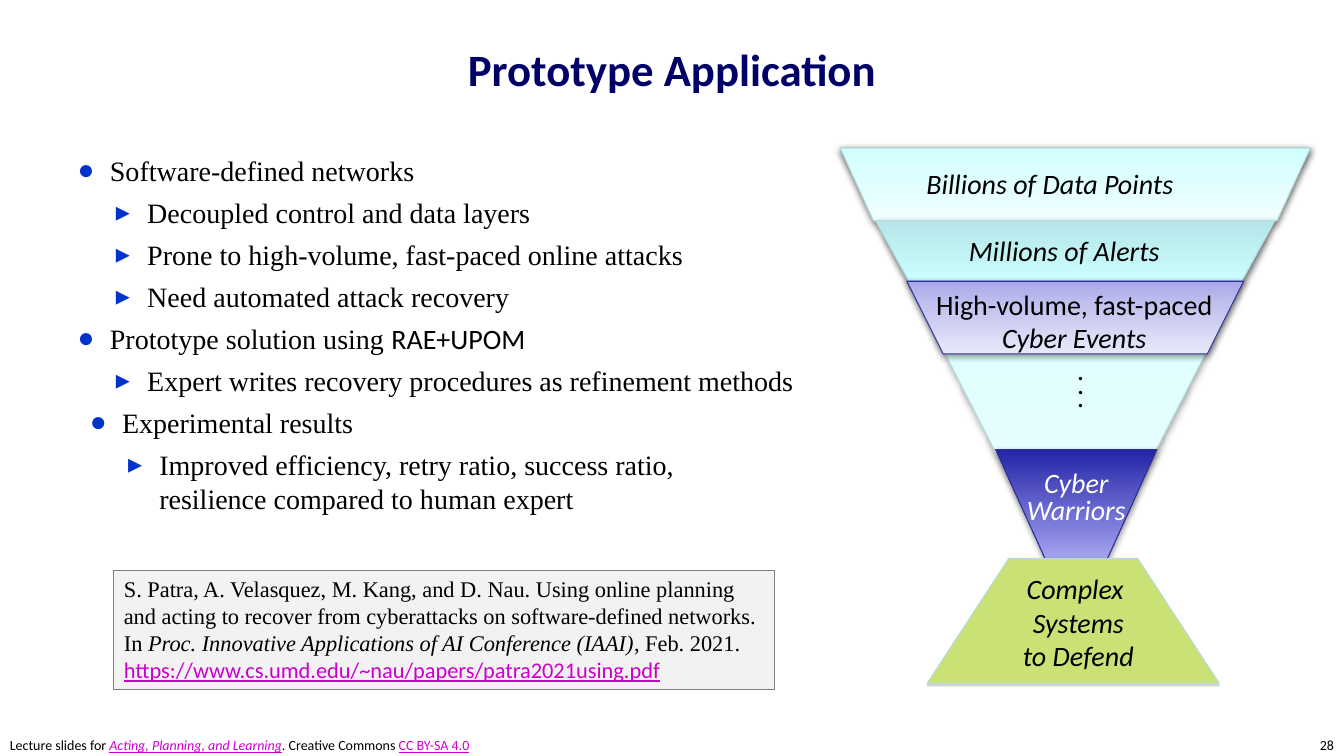
from dataclasses import dataclass

from lxml.etree import SubElement
from pptx import Presentation
from pptx.dml.color import RGBColor
from pptx.enum.shapes import MSO_SHAPE as Preset
from pptx.enum.text import MSO_ANCHOR as Anchor, MSO_AUTO_SIZE as AutoSize, PP_ALIGN as Align
from pptx.oxml.ns import qn
from pptx.util import Inches, Pt


@dataclass(frozen=True)
class Theme:
    sans: str = "Calibri"
    serif: str = "Times New Roman"
    black: str = "000000"
    white: str = "FFFFFF"
    navy: str = "000066"
    bullet: str = "0033CC"
    link: str = "CC00CC"
    panel: str = "F2F2F2"
    gray: str = "808080"
    lime: str = "CAE175"
    pale_line: str = "B6DCDF"
    dark_line: str = "2F2F98"
    ice: tuple = ((0, "CFFFFF"), (35, "DDFEFF"), (100, "F0FFFF"))
    aqua: tuple = ((0, "B5E5E9"), (100, "CBFFFF"))
    lilac: tuple = ((0, "A8A8EA"), (35, "C3C3EF"), (100, "E8E8FA"))
    indigo: tuple = ((0, "2424A8"), (100, "A3A3EF"))
    title_size: int = 32
    body_size: int = 20
    cite_size: int = 16
    foot_size: int = 10


THEME = Theme()


@dataclass(frozen=True)
class Box:
    left: float
    top: float
    width: float
    height: float

    def inner(self, left, top, width, height):
        return Box(self.left + left, self.top + top, width, height)

    def lengths(self):
        return [Inches(side) for side in (self.left, self.top, self.width, self.height)]


def style_font(font, name=None, size=None, color=None, bold=None, italic=None, underline=None):
    if name:
        font.name = name
    if size:
        font.size = Pt(size)
    if color:
        font.color.rgb = RGBColor.from_string(color)
    for key, value in (("bold", bold), ("italic", italic), ("underline", underline)):
        if value is not None:
            setattr(font, key, value)


def write(para, spans, **base):
    style_font(para.font, **base)
    for text, changes in spans:
        for index, line in enumerate(text.split("\n")):
            if index:
                para.add_line_break()
            span = para.add_run()
            span.text = line
            style_font(span.font, **changes)


def move(shape, box):
    shape.left, shape.top, shape.width, shape.height = box.lengths()


def add_text(page, box, lines, align=Align.LEFT, wrap=True, margin=0.05, spacing=None, **base):
    shape = page.shapes.add_textbox(*box.lengths())
    frame = shape.text_frame
    frame.word_wrap = wrap
    frame.margin_top = frame.margin_bottom = Inches(margin)
    for index, spans in enumerate(lines):
        para = frame.add_paragraph() if index else frame.paragraphs[0]
        para.alignment = align
        if spacing:
            para.line_spacing = spacing
        write(para, spans, **base)
    return shape


def paint(shape, fill, line, shadow=None, angle=270):
    if isinstance(fill, str):
        shape.fill.solid()
        shape.fill.fore_color.rgb = RGBColor.from_string(fill)
    else:
        shape.fill.gradient()
        shape.fill.gradient_angle = angle
        stops = shape._element.spPr.find(".//" + qn("a:gsLst"))
        stops[:] = []
        for place, color in fill:
            stop = SubElement(stops, qn("a:gs"), pos=str(place * 1000))
            SubElement(stop, qn("a:srgbClr"), val=color)
    shape.line.color.rgb = RGBColor.from_string(line)
    shape.line.width = Pt(0.75)
    shape.shadow.inherit = False
    if shadow:
        color, alpha, blur, distance = shadow
        effects = shape._element.spPr.find(qn("a:effectLst"))
        outer = SubElement(effects, qn("a:outerShdw"), blurRad=str(Pt(blur)),
                           dist=str(Pt(distance)), dir="5400000", rotWithShape="0")
        tint = SubElement(outer, qn("a:srgbClr"), val=color)
        SubElement(tint, qn("a:alpha"), val=str(alpha * 1000))


def add_title(page, box):
    title = page.shapes.title
    move(title, box)
    frame = title.text_frame
    frame.auto_size = AutoSize.NONE
    frame.vertical_anchor = Anchor.BOTTOM
    para = frame.paragraphs[0]
    para.alignment = Align.CENTER
    write(para, [("Prototype Application", {})], name=THEME.sans,
          size=THEME.title_size, color=THEME.navy, bold=True)


def add_bullets(page, box):
    items = [
        (0, 0.32, [("Software-defined networks", {})]),
        (1, 0.69, [("Decoupled control and data layers", {})]),
        (1, 0.69, [("Prone to high-volume, fast-paced online attacks", {})]),
        (1, 0.69, [("Need automated attack recovery", {})]),
        (0, 0.32, [("Prototype solution using ", {}), ("RAE+UPOM", {"name": THEME.sans})]),
        (1, 0.69, [("Expert writes recovery procedures as refinement methods", {})]),
        (0, 0.44, [("Experimental results", {})]),
        (1, 0.81, [("Improved efficiency, retry ratio, success ratio,\n"
                    "resilience compared to human expert", {})]),
    ]
    body = page.placeholders[1]
    move(body, box)
    frame = body.text_frame
    frame.auto_size = AutoSize.NONE
    for index, (level, indent, spans) in enumerate(items):
        para = frame.add_paragraph() if index else frame.paragraphs[0]
        para.level = level
        props = para._p.get_or_add_pPr()
        props.set("marL", str(Inches(indent)))
        props.set("indent", str(Inches((-0.32, -0.31)[level])))
        SubElement(SubElement(props, qn("a:buClr")), qn("a:srgbClr"), val=THEME.bullet)
        SubElement(props, qn("a:buChar"), char="●▸"[level])
        para.space_before = Pt(6 if index else 0)
        write(para, spans, name=THEME.serif, size=THEME.body_size, color=THEME.black)


def add_band(page, center, top, height, half_top, half_bottom, fill, line, shadow):
    bottom = top + height
    corners = [(center + half_top, top), (center + half_bottom, bottom),
               (center - half_bottom, bottom), (center - half_top, top)]
    points = [(Inches(x), Inches(y)) for x, y in corners]
    builder = page.shapes.build_freeform(*points[0])
    builder.add_line_segments(points[1:], close=True)
    paint(builder.convert_to_shape(), fill, line, shadow)


def add_funnel(page, box):
    soft, firm = (THEME.black, 38, 5, 1.6), (THEME.black, 35, 5, 1.8)
    cone = page.shapes.add_shape(Preset.ISOSCELES_TRIANGLE, *box.inner(0, 0, 4.67, 4.56).lengths())
    cone.rotation = 180
    paint(cone, THEME.ice, THEME.pale_line, soft, angle=90)

    bands = [
        (0, 0, 0.72, 2.33, 2, THEME.ice, THEME.pale_line, soft),
        (0, 0.72, 0.6, 1.98, 1.65, THEME.aqua, THEME.pale_line, firm),
        (0, 1.32, 0.72, 1.67, 1.31, THEME.lilac, THEME.dark_line, soft),
        (0.01, 2.99, 1.08, 0.8, 0.31, THEME.indigo, THEME.dark_line, firm),
        (-0.02, 4.07, 1.24, 0.64, 1.45, THEME.lime, THEME.pale_line, (THEME.gray, 35, 0, 1.8)),
    ]
    middle = box.left + box.width / 2
    for shift, top, *rest in bands:
        add_band(page, middle + shift, box.top + top, *rest)

    slanted = {"italic": True}
    base = {"name": THEME.sans, "size": THEME.body_size, "color": THEME.black}
    centered = {**base, "align": Align.CENTER}
    add_text(page, box.inner(0.76, 0.13, 2.67, 0.44),
             [[("Billions of Data Points", {})]], wrap=False, **base, **slanted)
    add_text(page, box.inner(1.18, 0.8, 2.11, 0.44),
             [[("Millions of Alerts", {})]], wrap=False, **base, **slanted)
    add_text(page, box.inner(0.75, 1.33, 3.15, 0.77),
             [[("High-volume, fast-paced", {})], [("Cyber Events", slanted)]], **centered)
    dots = add_text(page, box.inner(2.16, 2.16, 0.54, 1.08), [[(". . .", {})]], **base)
    dots.text_frame._txBody.bodyPr.set("vert", "vert")
    add_text(page, box.inner(1.69, 4.15, 1.35, 1.11),
             [[("Complex ", {})], [("Systems to Defend", {})]], **centered, **slanted)
    add_text(page, box.inner(1.72, 3.16, 1.25, 0.65), [[("Cyber Warriors", {})]],
             spacing=0.8, **{**centered, "color": THEME.white}, **slanted)


def add_citation(page, box):
    panel = page.shapes.add_shape(Preset.RECTANGLE, *box.lengths())
    paint(panel, THEME.panel, THEME.gray)
    frame = panel.text_frame
    frame.word_wrap = True
    frame.vertical_anchor = Anchor.TOP
    para = frame.paragraphs[0]
    para.alignment = Align.LEFT
    write(para, [
        ("S. Patra, A. Velasquez, M. Kang, and D. Nau. Using online planning and acting to "
         "recover from cyberattacks on software-defined networks. In ", {}),
        ("Proc. Innovative Applications of AI Conference (IAAI)", {"italic": True}),
        (", Feb. 2021. ", {}),
        ("https://www.cs.umd.edu/~nau/papers/patra2021using.pdf",
         {"name": THEME.sans, "color": THEME.link, "underline": True}),
    ], name=THEME.serif, size=THEME.cite_size, color=THEME.black)


def add_footer(page, box):
    base = {"name": THEME.sans, "size": THEME.foot_size, "color": THEME.black,
            "wrap": False, "margin": 0.02}
    link = {"color": THEME.link, "underline": True}
    add_text(page, box.inner(0, 0, 4.97, box.height), [[
        ("Lecture slides for ", {}),
        ("Acting, Planning, and Learning", {**link, "italic": True}),
        (". Creative Commons ", {}),
        ("CC BY-SA 4.0", link),
    ]], **base)
    add_text(page, box.inner(box.width - 0.36, 0, 0.36, box.height),
             [[("28", {})]], align=Align.RIGHT, **base)


def main():
    deck = Presentation()
    deck.slide_width, deck.slide_height = Inches(13.33), Inches(7.5)
    page = deck.slides.add_slide(deck.slide_layouts[1])
    add_footer(page, Box(0, 7.29, 13.33, 0.21))
    add_title(page, Box(0.22, 0.11, 12.89, 0.89))
    add_bullets(page, Box(0.67, 1.47, 12, 3))
    add_funnel(page, Box(8.33, 1.47, 4.67, 5.31))
    add_citation(page, Box(1.13, 5.66, 6.55, 1.18))
    deck.save("out.pptx")


if __name__ == "__main__":
    main()
